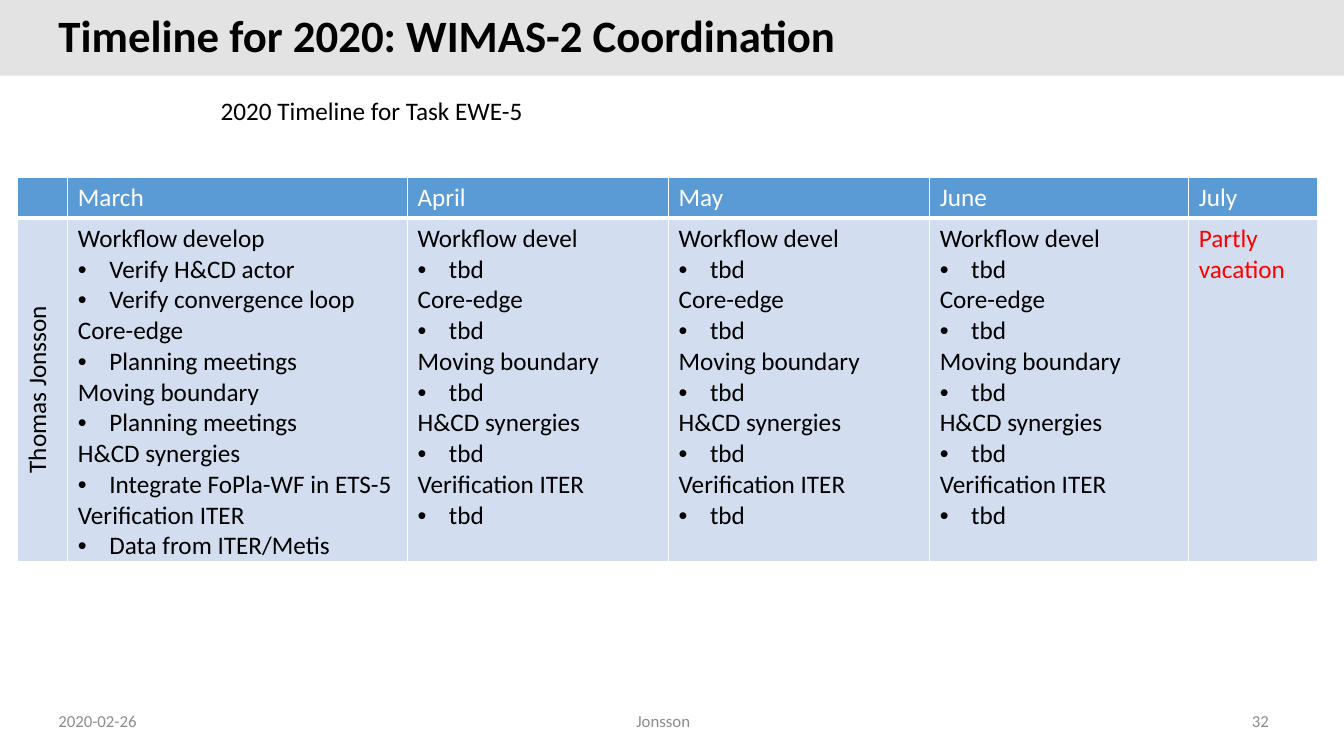
from pptx import Presentation
from pptx.dml.color import RGBColor as Rgb
from pptx.enum.shapes import MSO_SHAPE as Shape
from pptx.enum.text import MSO_ANCHOR as Anchor, MSO_AUTO_SIZE as Fit, PP_ALIGN as Align
from pptx.oxml import parse_xml
from pptx.oxml.ns import nsdecls
from pptx.util import Cm, Pt

TITLE = "Timeline for 2020: WIMAS-2 Coordination"
TASK = "2020 Timeline for Task EWE-5"
NAME = "Thomas Jonsson"
MARCH = [
    ("Workflow develop", ["Verify H&CD actor", "Verify convergence loop"]),
    ("Core-edge", ["Planning meetings"]),
    ("Moving boundary", ["Planning meetings"]),
    ("H&CD synergies", ["Integrate FoPla-WF in ETS-5"]),
    ("Verification ITER", ["Data from ITER/Metis"]),
]
TOPICS = ["Workflow devel", "Core-edge", "Moving boundary", "H&CD synergies",
          "Verification ITER"]
LATER = [(topic, ["tbd"]) for topic in TOPICS]
# month, column width in cm, topics with their steps, text colour
MONTHS = [
    ("March", 8.56, MARCH, "black"),
    ("April", 6.58, LATER, "black"),
    ("May", 6.58, LATER, "black"),
    ("June", 6.53, LATER, "black"),
    ("July", 3.25, [("Partly vacation", [])], "red"),
]
NAME_W = 1.28
HEAD_H, BODY_H = 1.03, 8.64
# text, left and width in cm, alignment
FOOTER = [
    ("2020-02-26", 1.22, 7.62, Align.LEFT),
    ("Jonsson", 11, 11.43, Align.CENTER),
    ("32", 24.61, 7.62, Align.RIGHT),
]
HUES = {"black": "000000", "white": "FFFFFF", "red": "FF0000", "grey": "8C8C8C",
        "band": "E3E3E3", "head": "5B9BD5", "body": "D2DEEF"}


def hue(name):
    return Rgb.from_string(HUES[name])


def write(frame, lines, size=18, color="black", bold=False, align=Align.LEFT):
    """Fill a text frame with (text, bulleted) lines."""
    frame.word_wrap = True
    for i, (text, dot) in enumerate(lines):
        para = frame.paragraphs[0] if i == 0 else frame.add_paragraph()
        para.alignment = align
        if dot:
            props = para._p.get_or_add_pPr()
            props.set("marL", str(Cm(0.79)))
            props.set("indent", str(-Cm(0.79)))
            props.append(parse_xml(f'<a:buFont {nsdecls("a")} typeface="Arial"/>'))
            props.append(parse_xml(f'<a:buChar {nsdecls("a")} char="•"/>'))
        run = para.add_run()
        run.text = text
        font = run.font
        font.name, font.size, font.bold = "Calibri", Pt(size), bold
        font.color.rgb = hue(color)


def label(slide, text, left, top, width, height, anchor=Anchor.TOP, **style):
    box = slide.shapes.add_textbox(Cm(left), Cm(top), Cm(width), Cm(height))
    box.text_frame.vertical_anchor = anchor
    write(box.text_frame, [(text, False)], **style)


def paint(cell, fill, base):
    """Set a cell's fill and white borders; base is the bottom width."""
    cell.fill.solid()
    cell.fill.fore_color.rgb = hue(fill)
    props = cell._tc.get_or_add_tcPr()
    for i, (side, width) in enumerate(zip("LRTB", (1, 1, 1, base))):
        props.insert(i, parse_xml(
            f'<a:ln{side} {nsdecls("a")} w="{Pt(width)}"><a:solidFill>'
            f'<a:srgbClr val="{HUES["white"]}"/></a:solidFill></a:ln{side}>'))


def head(slide, width):
    title = slide.shapes.title
    title.left, title.top, title.width, title.height = Cm(1.22), Cm(0.33), Cm(29.31), Cm(1.24)
    frame = title.text_frame
    frame.auto_size = Fit.NONE
    frame.vertical_anchor = Anchor.MIDDLE
    write(frame, [(TITLE, False)], size=32, bold=True)
    frame.paragraphs[0].line_spacing = 0.9
    band = slide.shapes.add_shape(Shape.RECTANGLE, 0, 0, width, Cm(1.91))
    band.shadow.inherit = False
    band.fill.solid()
    band.fill.fore_color.rgb = hue("band")
    band.line.fill.background()
    title.element.addprevious(band.element)


def plan(slide):
    widths = [NAME_W] + [month[1] for month in MONTHS]
    table = slide.shapes.add_table(2, len(widths), Cm(0.43), Cm(4.47), Cm(sum(widths)),
                                   Cm(HEAD_H + BODY_H)).table
    for col, width in zip(table.columns, widths):
        col.width = Cm(width)
    for row, height in zip(table.rows, (HEAD_H, BODY_H)):
        row.height = Cm(height)
    for i in range(len(widths)):
        paint(table.cell(0, i), "head", 3)
        paint(table.cell(1, i), "body", 1)
    who = table.cell(1, 0)
    who._tc.get_or_add_tcPr().set("vert", "vert270")
    write(who.text_frame, [(NAME, False)], align=Align.CENTER)
    for i, (month, _, topics, color) in enumerate(MONTHS, 1):
        write(table.cell(0, i).text_frame, [(month, False)], color="white")
        lines = []
        for topic, steps in topics:
            lines += [(topic, False)] + [(step, True) for step in steps]
        write(table.cell(1, i).text_frame, lines, color=color)


def main():
    deck = Presentation()
    deck.slide_width, deck.slide_height = Cm(33.87), Cm(19.05)
    slide = deck.slides.add_slide(deck.slide_layouts[5])
    head(slide, deck.slide_width)
    label(slide, TASK, 5.31, 2.29, 18.8, 1.02)
    plan(slide)
    for text, left, width, align in FOOTER:
        label(slide, text, left, 17.65, width, 1.02, anchor=Anchor.MIDDLE,
              size=12, color="grey", align=align)
    deck.save("out.pptx")


if __name__ == "__main__":
    main()
